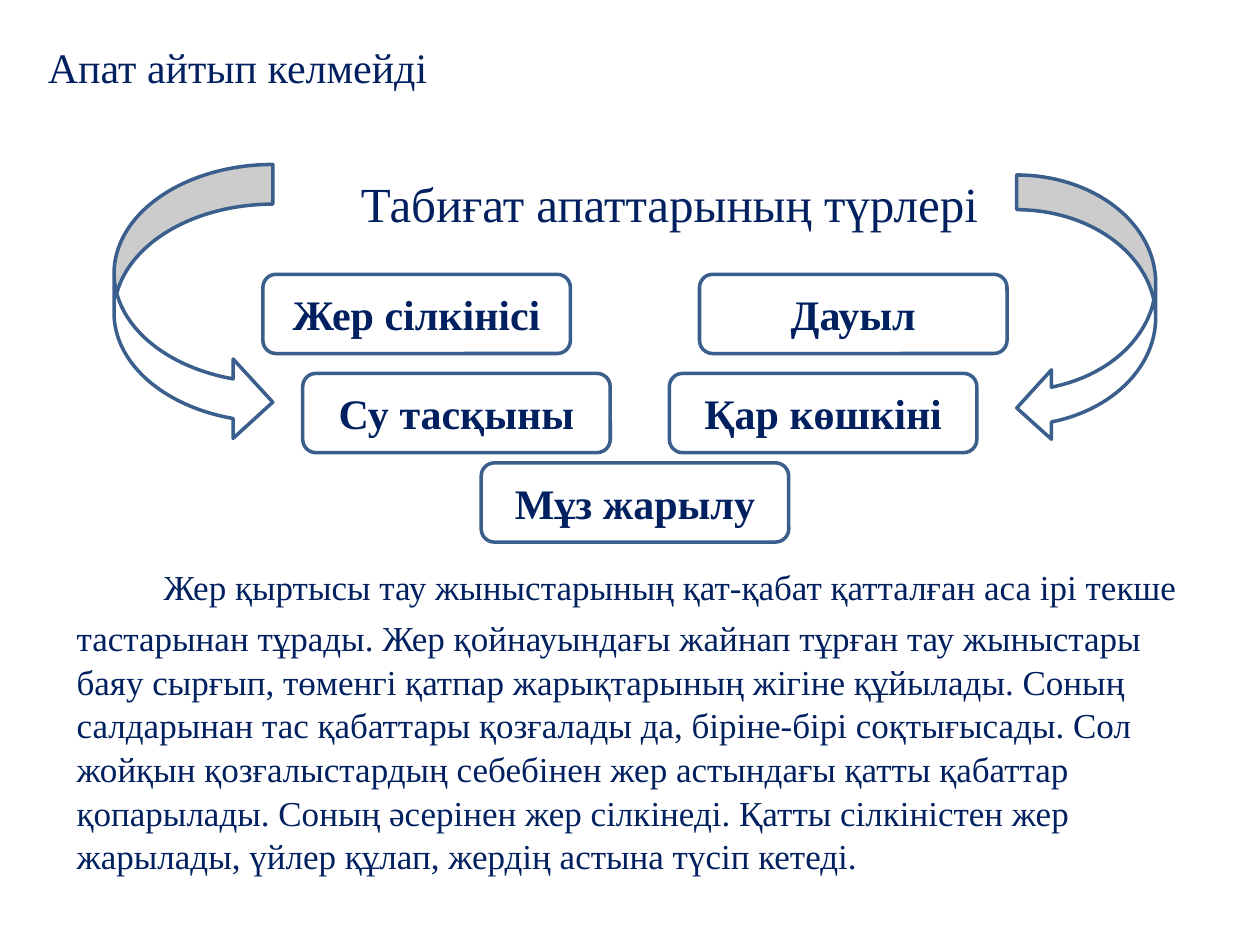
from dataclasses import dataclass

from pptx import Presentation
from pptx.dml.color import RGBColor
from pptx.enum.shapes import MSO_SHAPE
from pptx.enum.text import MSO_ANCHOR, PP_ALIGN
from pptx.util import Pt

ROUNDED = MSO_SHAPE.ROUNDED_RECTANGLE
RIGHT_ARROW = MSO_SHAPE.CURVED_RIGHT_ARROW
LEFT_ARROW = MSO_SHAPE.CURVED_LEFT_ARROW
MIDDLE = MSO_ANCHOR.MIDDLE
TOP = MSO_ANCHOR.TOP
LEFT = PP_ALIGN.LEFT
CENTER = PP_ALIGN.CENTER

FONT = "Times New Roman"
NAVY = "002060"
OUTLINE = "3A5F8C"
WHITE = "FFFFFF"

HAZARD_WIDTH = 175.75
HAZARD_HEIGHT = 45.3
EXPLANATION = (
    "Жер қыртысы тау жыныстарының қат-қабат қатталған аса ірі текше тастарынан тұрады. "
    "Жер қойнауындағы жайнап тұрған тау жыныстары баяу сырғып, төменгі қатпар "
    "жарықтарының жігіне құйылады. Соның салдарынан тас қабаттары қозғалады да, "
    "біріне-бірі соқтығысады. Сол жойқын қозғалыстардың себебінен жер астындағы қатты "
    "қабаттар қопарылады. Соның әсерінен жер сілкінеді. Қатты сілкіністен жер жарылады, "
    "үйлер құлап, жердің астына түсіп кетеді."
)


@dataclass(frozen=True)
class Area:
    left: float
    top: float
    width: float
    height: float

    def lengths(self) -> tuple:
        return Pt(self.left), Pt(self.top), Pt(self.width), Pt(self.height)


@dataclass(frozen=True)
class Hazard:
    label: str
    left: float
    top: float


@dataclass(frozen=True)
class Arrow:
    kind: MSO_SHAPE
    area: Area


HAZARDS = [
    Hazard("Жер сілкінісі", 150.25, 156.75),
    Hazard("Дауыл", 399.75, 156.75),
    Hazard("Қар көшкіні", 382.5, 213.4),
    Hazard("Су тасқыны", 173, 213.4),
    Hazard("Мұз жарылу", 275, 264.5),
]
ARROWS = [
    Arrow(RIGHT_ARROW, Area(65.2, 94, 90.7, 158.5)),
    Arrow(LEFT_ARROW, Area(581, 100, 79.4, 153)),
]


def color(code: str) -> RGBColor:
    return RGBColor.from_string(code)


def write(shape, text: str, size: float, align=LEFT, anchor=MIDDLE, bold=False):
    frame = shape.text_frame
    frame.word_wrap = True
    frame.vertical_anchor = anchor
    para = frame.paragraphs[0]
    para.alignment = align
    para.font.name = FONT
    para.font.size = Pt(size)
    para.font.bold = bold
    para.font.color.rgb = color(NAVY)
    para.add_run().text = text
    return para


def add_text(page, area: Area, text: str, size: float, align=LEFT, anchor=MIDDLE):
    return write(page.shapes.add_textbox(*area.lengths()), text, size, align, anchor)


def add_outlined(page, kind: MSO_SHAPE, area: Area):
    shape = page.shapes.add_shape(kind, *area.lengths())
    shape.shadow.inherit = False
    shape.fill.solid()
    shape.fill.fore_color.rgb = color(WHITE)
    shape.line.color.rgb = color(OUTLINE)
    shape.line.width = Pt(2)
    return shape


def add_hazard(page, hazard: Hazard) -> None:
    area = Area(hazard.left, hazard.top, HAZARD_WIDTH, HAZARD_HEIGHT)
    write(add_outlined(page, ROUNDED, area), hazard.label, 24, CENTER, bold=True)


def add_explanation(page) -> None:
    para = add_text(page, Area(36.7, 298, 663, 196), " ", 20, anchor=TOP)
    para.line_spacing = 1.04
    para.runs[0].font.size = Pt(40)
    para.add_run().text = EXPLANATION
    para._p.get_or_add_pPr().set("indent", str(Pt(39.7)))


def main() -> None:
    deck = Presentation()
    deck.slide_width, deck.slide_height = Pt(720), Pt(540)
    page = deck.slides.add_slide(deck.slide_layouts[6])
    add_explanation(page)
    for arrow in ARROWS:
        add_outlined(page, arrow.kind, arrow.area)
    for hazard in HAZARDS:
        add_hazard(page, hazard)
    add_text(page, Area(20.2, 21, 459, 34), "Апат айтып келмейді", 24)
    add_text(page, Area(153, 93.5, 459, 45), "Табиғат апаттарының түрлері", 28, CENTER)
    deck.save("out.pptx")


if __name__ == "__main__":
    main()
